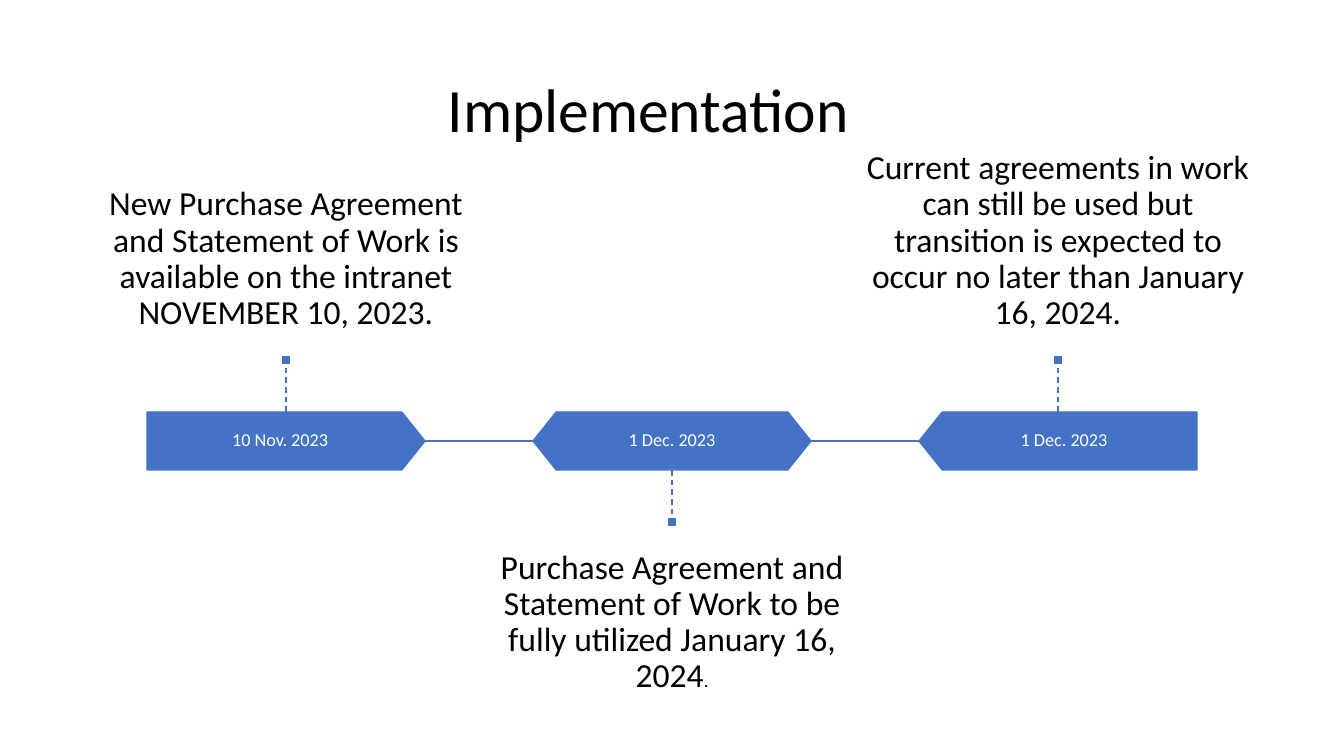
import pptx
import pptx.dml.color
import pptx.enum.dml
import pptx.enum.shapes
import pptx.enum.text
import pptx.util
from lxml import etree

EMU_PER_PX = 914400 / 100.8
FONT = "Calibri"
BLUE, WHITE, BLACK = "4472C4", "FFFFFF", "000000"
SHAPES = pptx.enum.shapes.MSO_SHAPE
ANCHOR = pptx.enum.text.MSO_ANCHOR
TOP, BOTTOM = 0, 2

STEP, FIRST_CENTER = 386, 286
BAR_TOP, BAR_WIDTH, BAR_HEIGHT = 412, 278, 58
BAR_MIDDLE = BAR_TOP + BAR_HEIGHT // 2
LABEL_WIDTH, LABEL_SHIFT = 266, 6
CAPTION_HEIGHT, MARKER_SIZE, STEM_LENGTH = 153, 10, 47

MILESTONES = [
    (SHAPES.PENTAGON, 0, "10 Nov. 2023", True,
     [("New Purchase Agreement and Statement of Work is available on the intranet NOVEMBER 10, 2023.", 24)]),
    (SHAPES.HEXAGON, 0, "1 Dec. 2023", False,
     [("Purchase Agreement and Statement of Work to be fully utilized January 16, 2024", 24), (".", 13)]),
    (SHAPES.PENTAGON, 180, "1 Dec. 2023", True,
     [("Current agreements in work can still be used but transition is expected to occur no later than January 16, 2024.", 24)]),
]


def px(length):
    return pptx.util.Emu(round(length * EMU_PER_PX))


def color(hex_string):
    return pptx.dml.color.RGBColor.from_string(hex_string)


def format_text(shape, runs, hex_string, anchor, inset_x, inset_y):
    frame = shape.text_frame
    frame.word_wrap = True
    frame.auto_size = pptx.enum.text.MSO_AUTO_SIZE.NONE
    frame.vertical_anchor = anchor
    frame.margin_left = frame.margin_right = px(inset_x)
    frame.margin_top = frame.margin_bottom = px(inset_y)
    paragraph = frame.paragraphs[0]
    paragraph.alignment = pptx.enum.text.PP_ALIGN.CENTER
    paragraph.line_spacing = 0.9
    paragraph.font.name = FONT
    paragraph.font.size = pptx.util.Pt(runs[0][1])
    paragraph.font.color.rgb = color(hex_string)
    for text, size in runs:
        run = paragraph.add_run()
        run.text = text
        if len(runs) > 1:
            run.font.name = FONT
            run.font.size = pptx.util.Pt(size)
            run.font.color.rgb = color(hex_string)


def set_title(slide, text):
    title = slide.shapes.title
    title.left, title.top, title.width, title.height = px(69), px(40), px(1159), px(146)
    format_text(title, [(text, 44)], BLACK, ANCHOR.MIDDLE, 10, 5)


def add_text(slide, left, top, width, height, *text_format):
    box = slide.shapes.add_textbox(px(left), px(top), px(width), px(height))
    format_text(box, *text_format)


def add_block(slide, kind, left, top, width, height, line):
    shape = slide.shapes.add_shape(kind, px(left), px(top), px(width), px(height))
    shape.shadow.inherit = False
    shape.fill.solid()
    shape.fill.fore_color.rgb = color(BLUE)
    shape.line.color.rgb = color(line)
    shape.line.width = pptx.util.Pt(1)
    return shape


def add_line(slide, x1, y1, x2, y2):
    connector = slide.shapes.add_connector(
        pptx.enum.shapes.MSO_CONNECTOR.STRAIGHT, px(x1), px(y1), px(x2), px(y2))
    connector.line.color.rgb = color(BLUE)
    connector.line.width = pptx.util.Pt(1)
    etree.SubElement(connector._element.spPr, pptx.oxml.ns.qn("a:effectLst"))
    return connector


def add_bar(slide, kind, rotation, center, date):
    bar = add_block(slide, kind, center - BAR_WIDTH // 2, BAR_TOP, BAR_WIDTH, BAR_HEIGHT, BLUE)
    bar.adjustments[0] = 0.4
    bar.rotation = rotation
    shift = 0
    if kind == SHAPES.PENTAGON:
        shift = LABEL_SHIFT if rotation else -LABEL_SHIFT
    add_text(slide, center + shift - LABEL_WIDTH // 2, BAR_TOP, LABEL_WIDTH, BAR_HEIGHT,
             [(date, 13)], WHITE, ANCHOR.MIDDLE, 11, 11)


def add_callout(slide, center, above, runs):
    if above:
        bar_edge, side, anchor = BAR_TOP, BOTTOM, ANCHOR.BOTTOM
        marker_top = bar_edge - STEM_LENGTH - MARKER_SIZE
        caption_top = marker_top - CAPTION_HEIGHT
    else:
        bar_edge, side, anchor = BAR_TOP + BAR_HEIGHT, TOP, ANCHOR.TOP
        marker_top = bar_edge + STEM_LENGTH
        caption_top = marker_top + MARKER_SIZE
    add_text(slide, center - STEP // 2, caption_top, STEP, CAPTION_HEIGHT,
             runs, BLACK, anchor, 0, 23)
    stem = add_line(slide, center, bar_edge, center, marker_top)
    stem.line.dash_style = pptx.enum.dml.MSO_LINE.DASH
    marker = add_block(slide, SHAPES.RECTANGLE, center - MARKER_SIZE // 2, marker_top,
                       MARKER_SIZE, MARKER_SIZE, WHITE)
    stem.end_connect(marker, side)


def main():
    presentation = pptx.Presentation()
    presentation.slide_width, presentation.slide_height = px(1344), px(756)
    slide = presentation.slides.add_slide(presentation.slide_layouts[5])
    set_title(slide, "Implementation")
    for index, (kind, rotation, date, above, runs) in enumerate(MILESTONES):
        center = FIRST_CENTER + index * STEP
        add_bar(slide, kind, rotation, center, date)
        add_callout(slide, center, above, runs)
        if index:
            gap_end = center - BAR_WIDTH // 2
            add_line(slide, gap_end - STEP + BAR_WIDTH, BAR_MIDDLE, gap_end, BAR_MIDDLE)
    presentation.save("out.pptx")


if __name__ == "__main__":
    main()
